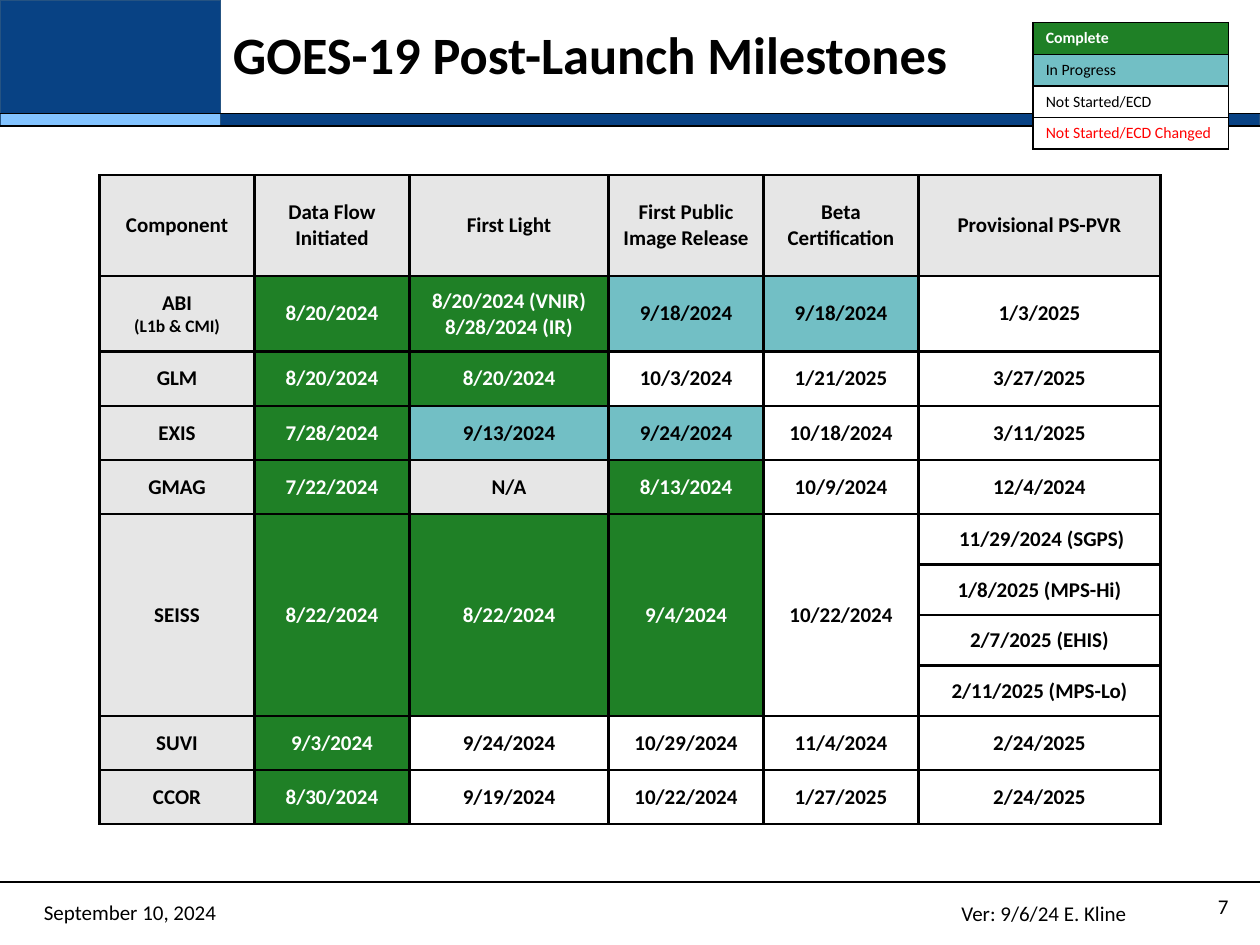
from lxml.etree import SubElement
from pptx import Presentation
from pptx.dml.color import RGBColor
from pptx.enum.shapes import MSO_CONNECTOR, MSO_SHAPE
from pptx.enum.text import MSO_ANCHOR, PP_ALIGN
from pptx.oxml.ns import qn
from pptx.util import Inches, Pt

BLACK = RGBColor(0x00, 0x00, 0x00)
WHITE = RGBColor(0xFF, 0xFF, 0xFF)
RED = RGBColor(0xFF, 0x00, 0x00)
NAVY = RGBColor(0x08, 0x42, 0x84)
SKY = RGBColor(0x82, 0xC3, 0xFF)
EDGE = RGBColor(0x25, 0x53, 0x82)
GREEN = RGBColor(0x1F, 0x80, 0x26)
TEAL = RGBColor(0x72, 0xBF, 0xC5)
GRAY = RGBColor(0xE6, 0xE6, 0xE6)

STATUS_COLORS = {
    "done": (GREEN, WHITE),
    "active": (TEAL, BLACK),
    "open": (WHITE, BLACK),
    "changed": (WHITE, RED),
    "label": (GRAY, BLACK),
}
LEGEND = [
    ("Complete", "done"),
    ("In Progress", "active"),
    ("Not Started/ECD", "open"),
    ("Not Started/ECD Changed", "changed"),
]
HEADINGS = ["Component", "Data Flow Initiated", "First Light",
            "First Public Image Release", "Beta Certification", "Provisional PS-PVR"]
MILESTONES = [
    (["ABI\n(L1b & CMI)", "8/20/2024", "8/20/2024 (VNIR)\n8/28/2024 (IR)",
      "9/18/2024", "9/18/2024", "1/3/2025"], "label done done active active open"),
    (["GLM", "8/20/2024", "8/20/2024", "10/3/2024", "1/21/2025", "3/27/2025"],
     "label done done open open open"),
    (["EXIS", "7/28/2024", "9/13/2024", "9/24/2024", "10/18/2024", "3/11/2025"],
     "label done active active open open"),
    (["GMAG", "7/22/2024", "N/A", "8/13/2024", "10/9/2024", "12/4/2024"],
     "label done label done open open"),
    (["SEISS", "8/22/2024", "8/22/2024", "9/4/2024", "10/22/2024", " 11/29/2024 (SGPS)"],
     "label done done done open open"),
    (["", "", "", "", "", "1/8/2025 (MPS-Hi)"], "label done done done open open"),
    (["", "", "", "", "", "2/7/2025 (EHIS)"], "label done done done open open"),
    (["", "", "", "", "", "2/11/2025 (MPS-Lo)"], "label done done done open open"),
    (["SUVI", "9/3/2024", "9/24/2024", "10/29/2024", "11/4/2024", "2/24/2025"],
     "label done open open open open"),
    (["CCOR", "8/30/2024", "9/19/2024", "10/22/2024", "1/27/2025", "2/24/2025"],
     "label done open open open open"),
]
COLUMN_WIDTHS = [1.23, 1.23, 1.58, 1.23, 1.23, 1.92]
ROW_HEIGHTS = [0.8, 0.6] + [0.43] * 3 + [0.4] * 4 + [0.43] * 2
SEISS_ROWS = (5, 8)


def apply(target, values):
    for name, value in values.items():
        setattr(target, name, value)


def style_font(font, size, color, bold=False):
    apply(font, {"name": "Calibri", "size": Pt(size), "bold": bold})
    font.color.rgb = color


def add_bar(page, box, color):
    bar = page.shapes.add_shape(MSO_SHAPE.RECTANGLE, *map(Inches, box))
    bar.shadow.inherit = False
    bar.fill.solid()
    bar.fill.fore_color.rgb = color
    bar.line.color.rgb = EDGE
    bar.line.width = Pt(0.75)


def add_rule(page, left, top, width):
    rule = page.shapes.add_connector(
        MSO_CONNECTOR.STRAIGHT, Inches(left), Inches(top), Inches(left + width), Inches(top))
    rule.line.color.rgb = BLACK
    rule.line.width = Pt(1)
    SubElement(rule._element.spPr, qn("a:effectLst"))


def add_text(page, box, text, size=12, bold=False, frame_format=None, para_format=None):
    frame = page.shapes.add_textbox(*map(Inches, box)).text_frame
    apply(frame, {"word_wrap": True, "vertical_anchor": MSO_ANCHOR.MIDDLE,
                  **(frame_format or {})})
    para = frame.paragraphs[0]
    para.text = text
    apply(para, para_format or {})
    style_font(para.font, size, BLACK, bold)


def add_borders(cell, width):
    properties = cell._tc.get_or_add_tcPr()
    for side in ("lnL", "lnR", "lnT", "lnB"):
        line = SubElement(properties, qn(f"a:{side}"), w=str(Pt(width)))
        SubElement(SubElement(line, qn("a:solidFill")), qn("a:srgbClr"), val=str(BLACK))


def fill_cell(cell, text, status, size, bold, border, cell_format, align):
    fill, color = STATUS_COLORS[status]
    add_borders(cell, border)
    cell.fill.solid()
    cell.fill.fore_color.rgb = fill
    apply(cell, cell_format)
    cell.text = text
    for para in cell.text_frame.paragraphs:
        para.alignment = align
        style_font(para.font, size, color, bold)


def add_grid(page, left, top, widths, heights):
    table = page.shapes.add_table(
        len(heights), len(widths), Inches(left), Inches(top),
        Inches(sum(widths)), Inches(sum(heights))).table
    apply(table, {"first_row": False, "horz_banding": False})
    for column, width in zip(table.columns, widths):
        column.width = Inches(width)
    for row, height in zip(table.rows, heights):
        row.height = Inches(height)
    return table


def add_header(page, left, top, width, height):
    block, band = 1.75, 0.1
    band_top = top + height - band
    add_bar(page, (left, top, block, height - band), NAVY)
    add_bar(page, (left + block, band_top, width - block, band), NAVY)
    add_bar(page, (left, band_top, block, band), SKY)
    for rule_top in (top + height, band_top):
        add_rule(page, left, rule_top, width)
    add_text(page, (left + block, top + 0.01, width - block, height - band),
             "GOES-19 Post-Launch Milestones", 30, True, para_format={"line_spacing": 0.9})


def add_legend(page, left, top, width, height):
    table = add_grid(page, left, top, [width], [height / len(LEGEND)] * len(LEGEND))
    for index, (text, status) in enumerate(LEGEND):
        fill_cell(table.cell(index, 0), text, status, 9, status == "done", 1,
                  {}, PP_ALIGN.LEFT)


def add_milestones(page, left, top):
    table = add_grid(page, left, top, COLUMN_WIDTHS, ROW_HEIGHTS)
    margins = {f"margin_{side}": Inches(0.1) for side in ("left", "right", "top", "bottom")}
    cell_format = {"vertical_anchor": MSO_ANCHOR.MIDDLE, **margins}
    rows = [(HEADINGS, " ".join(["label"] * len(HEADINGS)))] + MILESTONES
    for r, (texts, statuses) in enumerate(rows):
        for c, (text, status) in enumerate(zip(texts, statuses.split())):
            fill_cell(table.cell(r, c), text, status, 12, True, 1.5,
                      cell_format, PP_ALIGN.CENTER)
    table.cell(1, 0).text_frame.paragraphs[1].font.size = Pt(10)
    first, last = SEISS_ROWS
    for c in range(len(COLUMN_WIDTHS) - 1):
        table.cell(first, c).merge(table.cell(last, c))


def add_footer(page, left, top, width):
    add_rule(page, left, top, width)
    add_text(page, (left + 8.75, top, 1, 0.44), "7",
             frame_format={"margin_left": 0, "margin_right": 0, "margin_top": 0},
             para_format={"alignment": PP_ALIGN.RIGHT})
    add_text(page, (left + 0.25, top + 0.04, 1.63, 0.4), "September 10, 2024")
    add_text(page, (left + 7.06, top + 0.1, 2.45, 0.3), "Ver: 9/6/24 E. Kline",
             frame_format={"vertical_anchor": MSO_ANCHOR.TOP},
             para_format={"alignment": PP_ALIGN.CENTER})


def main():
    deck = Presentation()
    apply(deck, {"slide_width": Inches(10), "slide_height": Inches(7.5)})
    page = deck.slides.add_slide(deck.slide_layouts[6])
    add_header(page, 0, 0, 10, 1)
    add_footer(page, 0, 7, 10)
    add_legend(page, 8.2, 0.18, 1.55, 1)
    add_milestones(page, 0.79, 1.39)
    deck.save("out.pptx")


if __name__ == "__main__":
    main()
